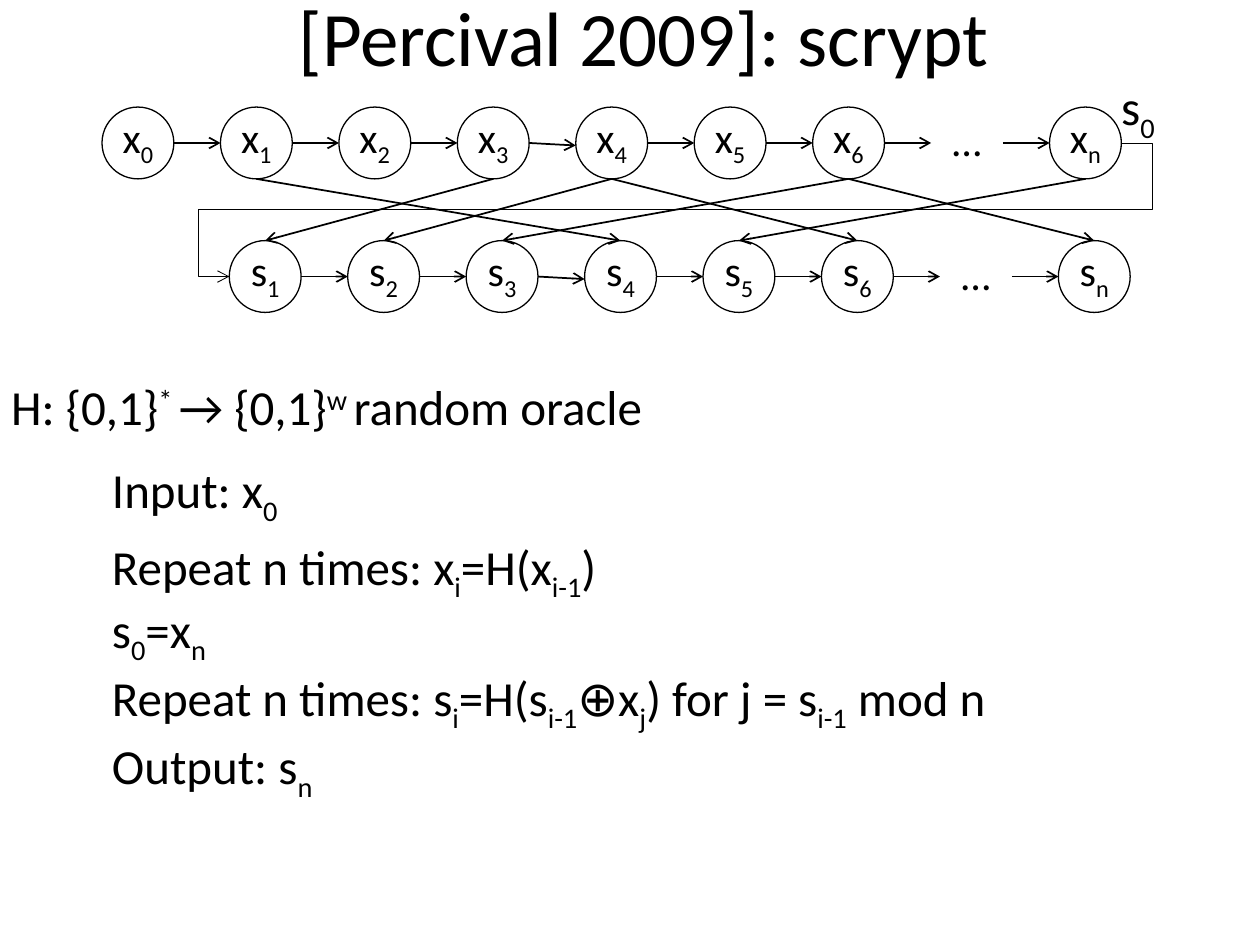
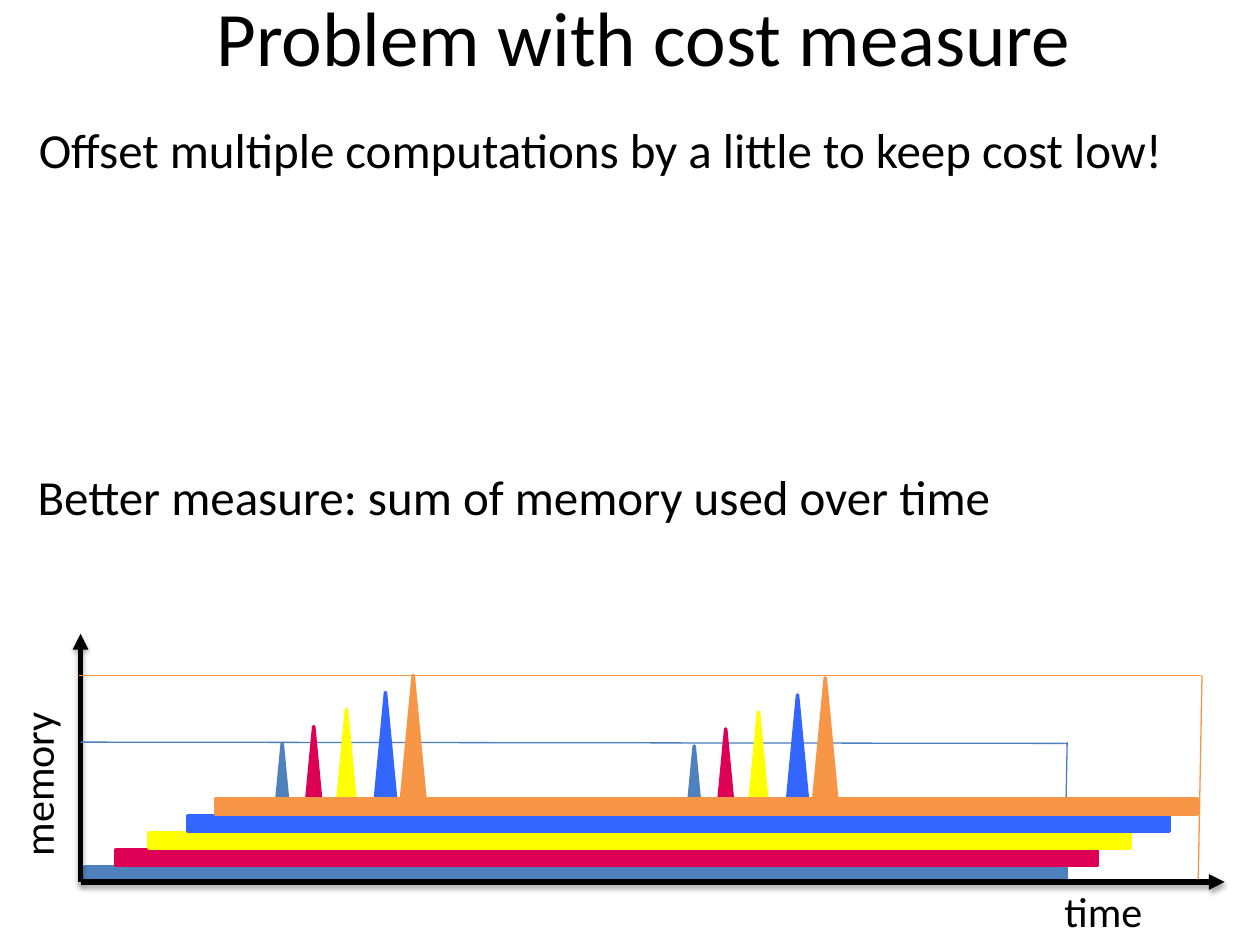
from lxml import etree
from pptx import Presentation
from pptx.dml.color import RGBColor
from pptx.enum.shapes import MSO_CONNECTOR, MSO_SHAPE
from pptx.enum.text import MSO_ANCHOR, PP_ALIGN
from pptx.oxml.ns import qn
from pptx.util import Inches, Pt

BLACK = RGBColor(0x00, 0x00, 0x00)
STEEL = RGBColor(0x4F, 0x81, 0xBD)
EDGE = RGBColor(0x4B, 0x7E, 0xBC)
RED = RGBColor(0xDE, 0x00, 0x55)
YELLOW = RGBColor(0xFF, 0xFF, 0x00)
BLUE = RGBColor(0x33, 0x66, 0xFF)
ORANGE = RGBColor(0xF7, 0x96, 0x46)

OVAL, RECT, PEAK = MSO_SHAPE.OVAL, MSO_SHAPE.RECTANGLE, MSO_SHAPE.ISOSCELES_TRIANGLE
LINE, ELBOW = MSO_CONNECTOR.STRAIGHT, MSO_CONNECTOR.ELBOW
LEFT, CENTER = PP_ALIGN.LEFT, PP_ALIGN.CENTER
TOP, MIDDLE = MSO_ANCHOR.TOP, MSO_ANCHOR.MIDDLE

FONT = "Calibri"
SUB, SUPER = -25, 30
NODE, PITCH = 0.57, 0.94
X_LEFT, X_TOP = 0.81, 0.85
S_LEFT, S_TOP = 1.82, 1.91


def write(frame, *parts, size=28, base=SUB, align=LEFT, anchor=TOP, wrap=True):
    """Write one paragraph; every second part is shifted by base percent."""
    frame.word_wrap = wrap
    frame.vertical_anchor = anchor
    para = frame.paragraphs[0]
    para.alignment = align
    for i, part in enumerate(parts):
        run = para.add_run()
        run.text = part
        run.font.name = FONT
        run.font.size = Pt(size)
        run.font.color.rgb = BLACK
        if i % 2:
            run.font._element.set("baseline", str(base * 1000))


def place(shape, x, y, w, h):
    shape.left, shape.top = Inches(x), Inches(y)
    shape.width, shape.height = Inches(w), Inches(h)


def add_slide(deck, title):
    slide = deck.slides.add_slide(deck.slide_layouts[5])
    head = slide.shapes.title
    place(head, 0.36, -0.34, 9.5, 1.25)
    write(head.text_frame, title, size=44, align=CENTER, anchor=MIDDLE)
    return slide


def add_text(slide, x, y, w, h, *parts, **style):
    box = slide.shapes.add_textbox(Inches(x), Inches(y), Inches(w), Inches(h))
    write(box.text_frame, *parts, **style)
    return box


def add_shape(slide, kind, x, y, w, h, fill=None, line=None, width=0.75):
    shape = slide.shapes.add_shape(kind, Inches(x), Inches(y), Inches(w), Inches(h))
    shape.shadow.inherit = False
    if fill is None:
        shape.fill.background()
    else:
        shape.fill.solid()
        shape.fill.fore_color.rgb = fill
    if line is None:
        shape.line.fill.background()
    else:
        shape.line.color.rgb = line
        shape.line.width = Pt(width)
    return shape


def add_line(slide, start, end, color=BLACK, width=1, tip=None, shadow=False, kind=LINE):
    line = slide.shapes.add_connector(kind, *map(Inches, start + end))
    line.line.color.rgb = color
    line.line.width = Pt(width)
    if tip:
        etree.SubElement(line.line._get_or_add_ln(), qn("a:tailEnd"), type=tip)
    effects = etree.SubElement(line._element.spPr, qn("a:effectLst"))
    if shadow:
        cast = etree.SubElement(effects, qn("a:outerShdw"), blurRad=str(Pt(3.1)),
                                dist=str(Pt(1.8)), dir="5400000", rotWithShape="0")
        tint = etree.SubElement(cast, qn("a:srgbClr"), val=str(BLACK))
        etree.SubElement(tint, qn("a:alpha"), val="35000")
    return line


def add_chain(slide, name, marks, left, top):
    """Draw a row of nodes with an arrow from each to the next."""
    mid = top + NODE / 2
    for i, mark in enumerate(marks):
        x = left + i * PITCH
        dots = mark == "…"
        node = add_shape(slide, OVAL, x, top, NODE, NODE, line=None if dots else BLACK)
        frame = node.text_frame
        frame.margin_top = 0
        write(frame, *([mark] if dots else [name, mark]), size=24,
              align=CENTER, anchor=MIDDLE, wrap=False)
        if i < len(marks) - 1:
            dip = 0.02 if mark == "3" else 0
            add_line(slide, (x + NODE, mid), (x + PITCH, mid + dip), tip="arrow")


def add_loop(slide):
    """Lead the end of the upper row round to the start of the lower one."""
    loop = add_line(slide, (8.9, X_TOP + NODE / 2), (S_LEFT, S_TOP + NODE / 2),
                    width=0.5, tip="arrow", kind=ELBOW)
    shape = loop._element.spPr.find(qn("a:prstGeom"))
    shape.set("prst", "bentConnector5")
    guides = shape.find(qn("a:avLst"))
    if guides is None:
        guides = etree.SubElement(shape, qn("a:avLst"))
    for i, value in enumerate((-3500, 50000, 103500), 1):
        etree.SubElement(guides, qn("a:gd"), name=f"adj{i}", fmla=f"val {value}")


def build_scrypt(deck):
    slide = add_slide(deck, "[Percival 2009]: scrypt")
    marks = ["0", "1", "2", "3", "4", "5", "6", "…", "n"]
    add_chain(slide, "x", marks, X_LEFT, X_TOP)
    add_chain(slide, "s", marks[1:], S_LEFT, S_TOP)

    # Column in the x row, column in the s row
    for x_col, s_col in ((3, 0), (4, 1), (6, 2), (1, 3), (8, 4), (4, 5), (6, 7)):
        start = X_LEFT + x_col * PITCH + NODE / 2
        end = S_LEFT + s_col * PITCH + NODE / 2
        add_line(slide, (start, X_TOP + NODE), (end, S_TOP), tip="arrow")
    add_loop(slide)
    add_text(slide, 8.8, 0.56, 0.57, 0.72, "s", "0")

    add_text(slide, -0.01, 2.94, 6.68, 0.72, "H: {0,1}", "* ", "→ {0,1}", "w ",
             "random oracle", base=SUPER)
    steps = (
        (3.6, ["Input: x", "0"]),
        (4.21, ["Repeat n times: x", "i", "=H(x", "i-1", ")"]),
        (4.71, ["s", "0", "=x", "n"]),
        (5.25, ["Repeat n times: s", "i", "=H(s", "i-1", "⊕x", "j",
                ") for j = s", "i-1", " mod n"]),
        (5.79, ["Output: s", "n"]),
    )
    for y, parts in steps:
        add_text(slide, 0.79, y, 7.78, 0.72, *parts)


def add_run(slide, x, y, color):
    """Draw one computation: a long bar with two memory peaks."""
    style = {"fill": color, "line": color, "width": 2}
    add_shape(slide, PEAK, x + 1.47, y - 0.98, 0.2, 1.05, **style)
    add_shape(slide, RECT, x, y, 7.79, 0.12, **style)
    add_shape(slide, PEAK, x + 4.74, y - 0.96, 0.2, 1.05, **style)


def build_cost(deck):
    slide = add_slide(deck, "Problem with cost measure")
    add_text(slide, 0.21, 0.9, 9.79, 0.72,
             "Offset multiple computations by a little to keep cost low!")
    add_text(slide, 0.2, 3.65, 9.79, 0.72,
             "Better measure: sum of memory used over time")
    label = add_text(slide, -0.38, 5.97, 1.35, 0.5, "memory", size=24, wrap=False)
    label.rotation = 270
    add_text(slide, 8.35, 6.98, 0.83, 0.5, "time", size=24, wrap=False)

    runs = ((0.67, STEEL), (0.92, RED), (1.18, YELLOW), (1.49, BLUE), (1.71, ORANGE))
    for i, (x, color) in enumerate(runs):
        add_run(slide, x, 6.88 - i * 0.135, color)
        if i == 0:
            for end in ((9.72, 7), (0.64, 5.03)):
                add_line(slide, (0.64, 7), end, width=3, tip="triangle", shadow=True)
            add_line(slide, (8.45, 6.94), (8.47, 5.89), EDGE, 0.75)
            add_line(slide, (0.64, 5.89), (8.47, 5.9), EDGE, 0.75)
    add_line(slide, (9.51, 6.98), (9.54, 5.36), ORANGE, 0.75)
    add_line(slide, (0.63, 5.36), (9.53, 5.36), ORANGE, 0.75)


def main():
    deck = Presentation()
    deck.slide_width, deck.slide_height = Inches(10), Inches(7.5)
    build_scrypt(deck)
    build_cost(deck)
    deck.save("out.pptx")


if __name__ == "__main__":
    main()
